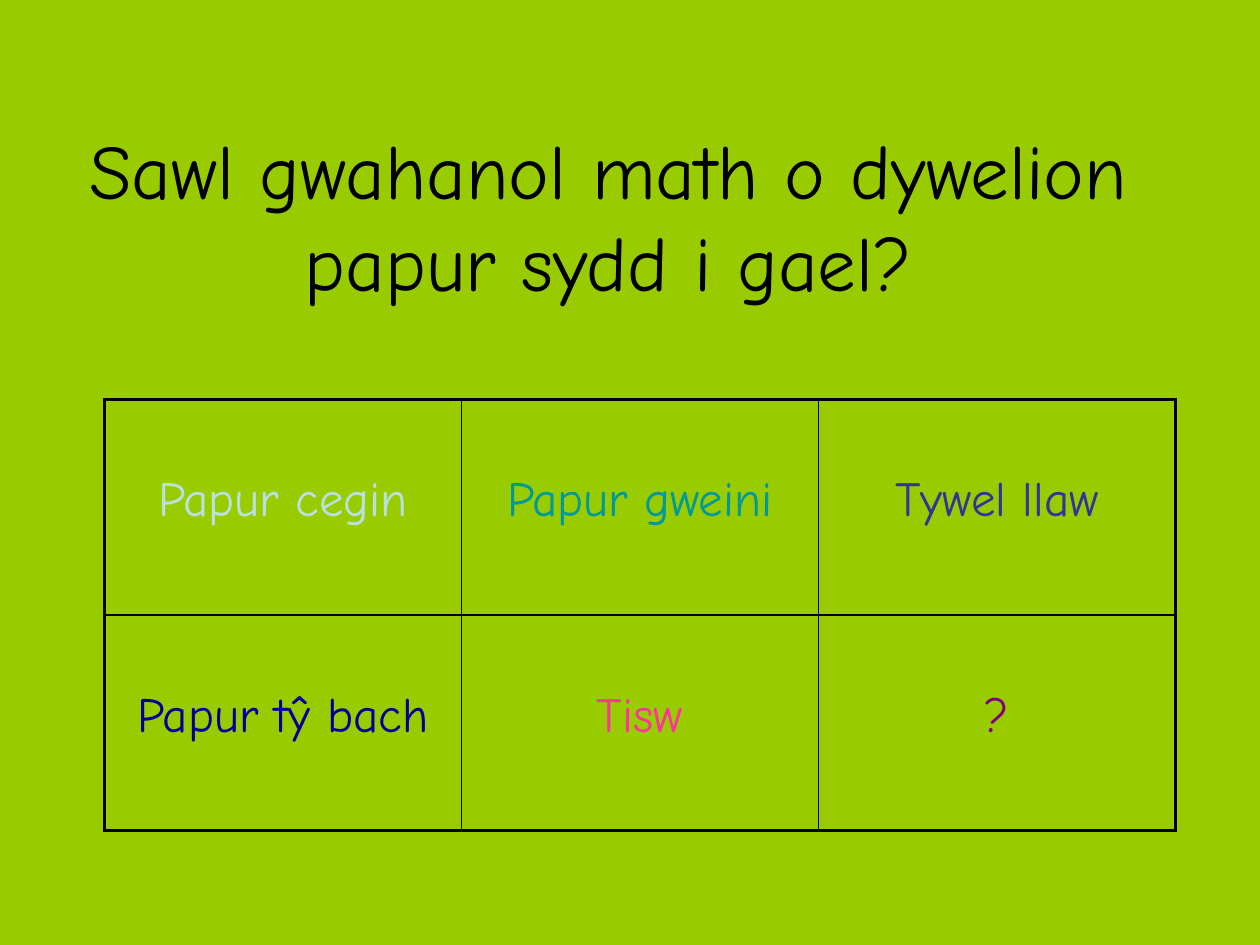
"""Build a slide asking how many kinds of paper towel there are, with a table of answers."""
from lxml import etree
from pptx import Presentation
from pptx import util as u
from pptx.dml.color import RGBColor
from pptx.enum import text
from pptx.oxml import ns

FONT = "Comic Neue"
ANSWERS = [
    [("Papur cegin", "BBE0E3"), ("Papur gweini", "009999"), ("Tywel llaw", "333399")],
    [("Papur tŷ bach", "000099"), ("Tisw", "FF3399"), ("?", "800080")],
]


def add_span(para, words, size, color):
    para.alignment = text.PP_ALIGN.CENTER
    span = para.add_run()
    span.text = words
    span.font.name = FONT
    span.font.size = u.Pt(size)
    span.font.color.rgb = RGBColor.from_string(color)


def add_borders(cell, widths):
    properties = cell._tc.get_or_add_tcPr()
    for position, (side, width) in enumerate(widths.items()):
        line = etree.Element(ns.qn(f"a:ln{side}"), w=str(u.Pt(width)))
        fill = etree.SubElement(line, ns.qn("a:solidFill"))
        etree.SubElement(fill, ns.qn("a:srgbClr"), val="000000")
        properties.insert(position, line)


deck = Presentation()
deck.slide_width, deck.slide_height = u.Inches(10), u.Inches(7.5)
page = deck.slides.add_slide(deck.slide_layouts[5])
page.background.fill.solid()
page.background.fill.fore_color.rgb = RGBColor.from_string("99CC00")

title = page.shapes.title
title.left, title.top = u.Inches(0.58), u.Inches(1.08)
title.width, title.height = u.Inches(8.5), u.Inches(1.25)
title.text_frame.word_wrap = True
title.text_frame.auto_size = text.MSO_AUTO_SIZE.NONE
title.text_frame.vertical_anchor = text.MSO_ANCHOR.MIDDLE
add_span(title.text_frame.paragraphs[0],
         "Sawl gwahanol math o dywelion papur sydd i gael?", 44, "000000")

rows, columns = len(ANSWERS), len(ANSWERS[0])
table = page.shapes.add_table(rows, columns, u.Inches(0.83), u.Inches(3.17),
                              u.Inches(8.5), u.Inches(3.42)).table
table.first_row = table.horz_banding = False

for row, answers in enumerate(ANSWERS):
    for column, (words, color) in enumerate(answers):
        cell = table.cell(row, column)
        cell.fill.background()
        cell.margin_top = u.Inches(0.58)
        add_span(cell.text_frame.paragraphs[0], words, 28, color)
        outer = {"L": column == 0, "R": column == columns - 1,
                 "T": row == 0, "B": row == rows - 1}
        add_borders(cell, {side: 2.25 if edge else 1 for side, edge in outer.items()})

deck.save("out.pptx")
